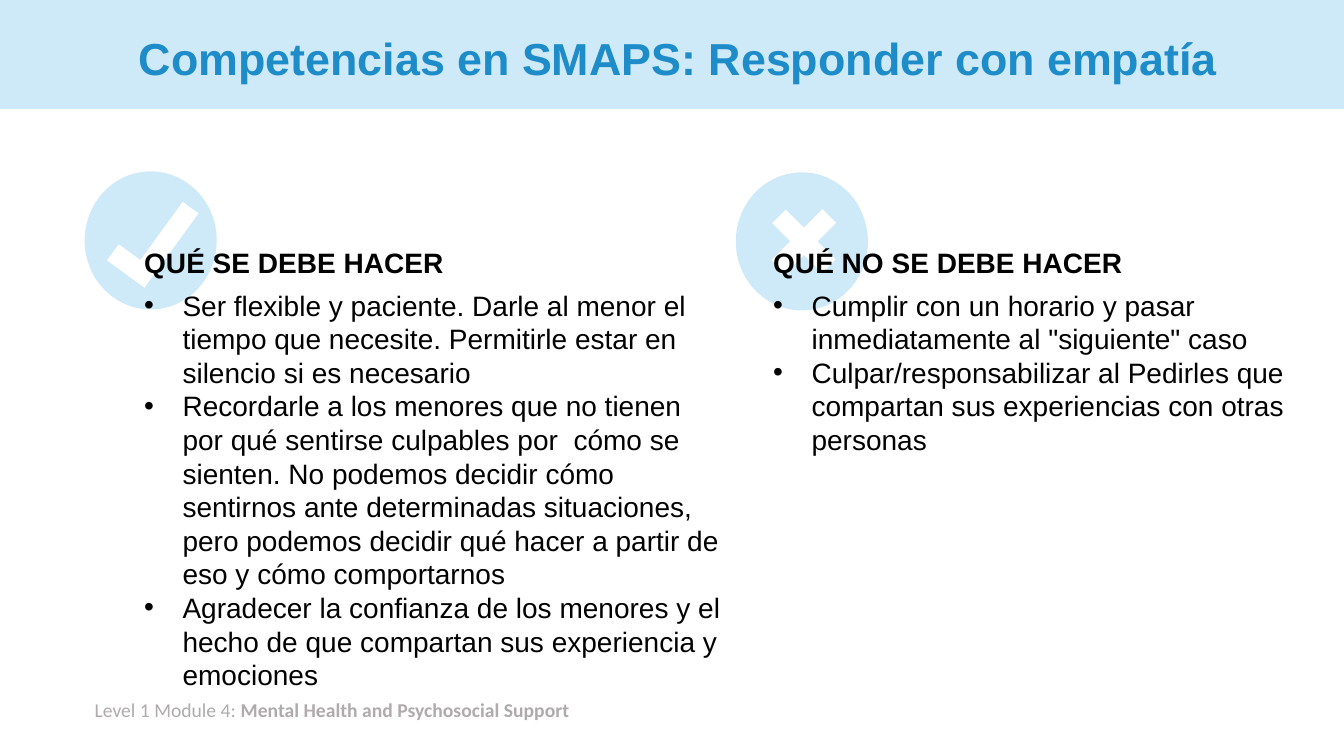
"""Build the slide on responding with empathy: what to do and what not to do."""
from dataclasses import dataclass

from lxml.etree import SubElement
from pptx import Presentation
from pptx.dml.color import RGBColor
from pptx.enum.shapes import MSO_SHAPE as Preset
from pptx.enum.text import MSO_ANCHOR as Anchor, MSO_AUTO_SIZE as AutoSize, PP_ALIGN as Align
from pptx.oxml.ns import qn
from pptx.util import Inches, Pt

WIDTH, HEIGHT = Inches(13.33), Inches(7.5)
COLUMNS = ROWS = 100


@dataclass(frozen=True)
class Theme:
    pale: str = "CEE9F8"
    accent: str = "1D8CC8"
    white: str = "FFFFFF"
    black: str = "000000"
    grey: str = "AFABAB"
    font: str = "Arial"
    footer_font: str = "Calibri"
    title_size: int = 32
    body_size: int = 20
    footer_size: int = 14
    indent: float = 0.38


THEME = Theme()


@dataclass(frozen=True)
class Box:
    left: float
    top: float
    width: float
    height: float

    def lengths(self) -> tuple[int, int, int, int]:
        column, row = WIDTH / COLUMNS, HEIGHT / ROWS
        return (round(self.left * column), round(self.top * row),
                round(self.width * column), round(self.height * row))


@dataclass(frozen=True)
class Mark:
    preset: Preset
    box: Box
    rotation: int
    adjustments: tuple[float, ...]


@dataclass(frozen=True)
class Advice:
    heading: str
    points: tuple[str, ...]
    text_box: Box
    circle: Box
    mark: Mark


BAND = Box(0, 0, 100, 14.4)
TITLE = Box(6.9, 1.73, 86.25, 12.67)
FOOTER = Box(6.3, 91.6, 46.35, 4.53)

ADVICE = (
    Advice(
        "QUÉ SE DEBE HACER",
        ("Ser flexible y paciente. Darle al menor el tiempo que necesite. "
         "Permitirle estar en silencio si es necesario",
         "Recordarle a los menores que no tienen por qué sentirse culpables por  cómo se sienten. "
         "No podemos decidir cómo sentirnos ante determinadas situaciones, "
         "pero podemos decidir qué hacer a partir de eso y cómo comportarnos",
         "Agradecer la confianza de los menores y el hecho de que compartan "
         "sus experiencia y emociones"),
        Box(9.98, 31.87, 44.78, 60.8),
        Box(6.3, 22.67, 9.83, 18.27),
        Mark(Preset.CORNER, Box(7.95, 28.27, 6.83, 6.13), 306, (0.42, 0.43)),
    ),
    Advice(
        "QUÉ NO SE DEBE HACER",
        ('Cumplir con un horario y pasar inmediatamente al "siguiente" caso',
         "Culpar/responsabilizar al Pedirles que compartan sus experiencias con otras personas"),
        Box(56.78, 31.87, 40.5, 29.33),
        Box(54.75, 22.8, 9.83, 18.27),
        Mark(Preset.MATH_PLUS, Box(56.25, 25.47, 7.13, 12.93), 45, (0.2,)),
    ),
)


def add_filled(slide, preset: Preset, box: Box, color: str):
    shape = slide.shapes.add_shape(preset, *box.lengths())
    shape.shadow.inherit = False
    shape.fill.solid()
    shape.fill.fore_color.rgb = RGBColor.from_string(color)
    shape.line.fill.background()
    return shape


def add_mark(slide, mark: Mark) -> None:
    shape = add_filled(slide, mark.preset, mark.box, THEME.white)
    shape.rotation = mark.rotation
    for index, value in enumerate(mark.adjustments):
        shape.adjustments[index] = value


def prepare(slide, shape, box: Box, anchor: Anchor = Anchor.TOP):
    shape.left, shape.top, shape.width, shape.height = box.lengths()
    slide.shapes.element.append(shape.element)
    frame = shape.text_frame
    frame.word_wrap = True
    frame.auto_size = AutoSize.NONE
    frame.vertical_anchor = anchor
    return frame


def write(paragraph, text: str, *, size: int = THEME.body_size, color: str = THEME.black,
          font: str = THEME.font, bold: bool = False, align: Align = Align.LEFT,
          line_spacing: float = 1.0, after: int = 0) -> None:
    paragraph.alignment = align
    paragraph.line_spacing = line_spacing
    paragraph.space_before, paragraph.space_after = Pt(0), Pt(after)
    run = paragraph.add_run()
    run.text = text
    run.font.name, run.font.size, run.font.bold = font, Pt(size), bold
    run.font.color.rgb = RGBColor.from_string(color)


def set_bullet(paragraph, bullet: str = "") -> None:
    properties = paragraph._p.get_or_add_pPr()
    indent = Inches(THEME.indent) if bullet else 0
    properties.set("marL", str(indent))
    properties.set("indent", str(-indent))
    if bullet:
        SubElement(properties, qn("a:buFont"), typeface=THEME.font)
        SubElement(properties, qn("a:buChar"), char=bullet)
    else:
        SubElement(properties, qn("a:buNone"))


def add_advice(slide, placeholder, advice: Advice) -> None:
    add_filled(slide, Preset.OVAL, advice.circle, THEME.pale)
    add_mark(slide, advice.mark)
    frame = prepare(slide, placeholder, advice.text_box)
    heading = frame.paragraphs[0]
    write(heading, advice.heading, bold=True, after=6)
    set_bullet(heading)
    for point in advice.points:
        paragraph = frame.add_paragraph()
        write(paragraph, point)
        set_bullet(paragraph, "•")


def main() -> None:
    presentation = Presentation()
    presentation.slide_width, presentation.slide_height = WIDTH, HEIGHT
    slide = presentation.slides.add_slide(presentation.slide_layouts.get_by_name("Two Content"))
    title, *bodies = list(slide.placeholders)

    add_filled(slide, Preset.RECTANGLE, BAND, THEME.pale)
    footer = prepare(slide, slide.shapes.add_textbox(*FOOTER.lengths()), FOOTER).paragraphs[0]
    for text, bold in (("Level 1 Module 4: ", False),
                       ("Mental Health and Psychosocial Support", True)):
        write(footer, text, size=THEME.footer_size, color=THEME.grey,
              font=THEME.footer_font, bold=bold)

    heading = prepare(slide, title, TITLE, Anchor.MIDDLE).paragraphs[0]
    write(heading, " Competencias en SMAPS: Responder con empatía", size=THEME.title_size,
          color=THEME.accent, bold=True, align=Align.CENTER, line_spacing=0.9)
    for placeholder, advice in zip(bodies, ADVICE):
        add_advice(slide, placeholder, advice)
    presentation.save("out.pptx")


if __name__ == "__main__":
    main()
